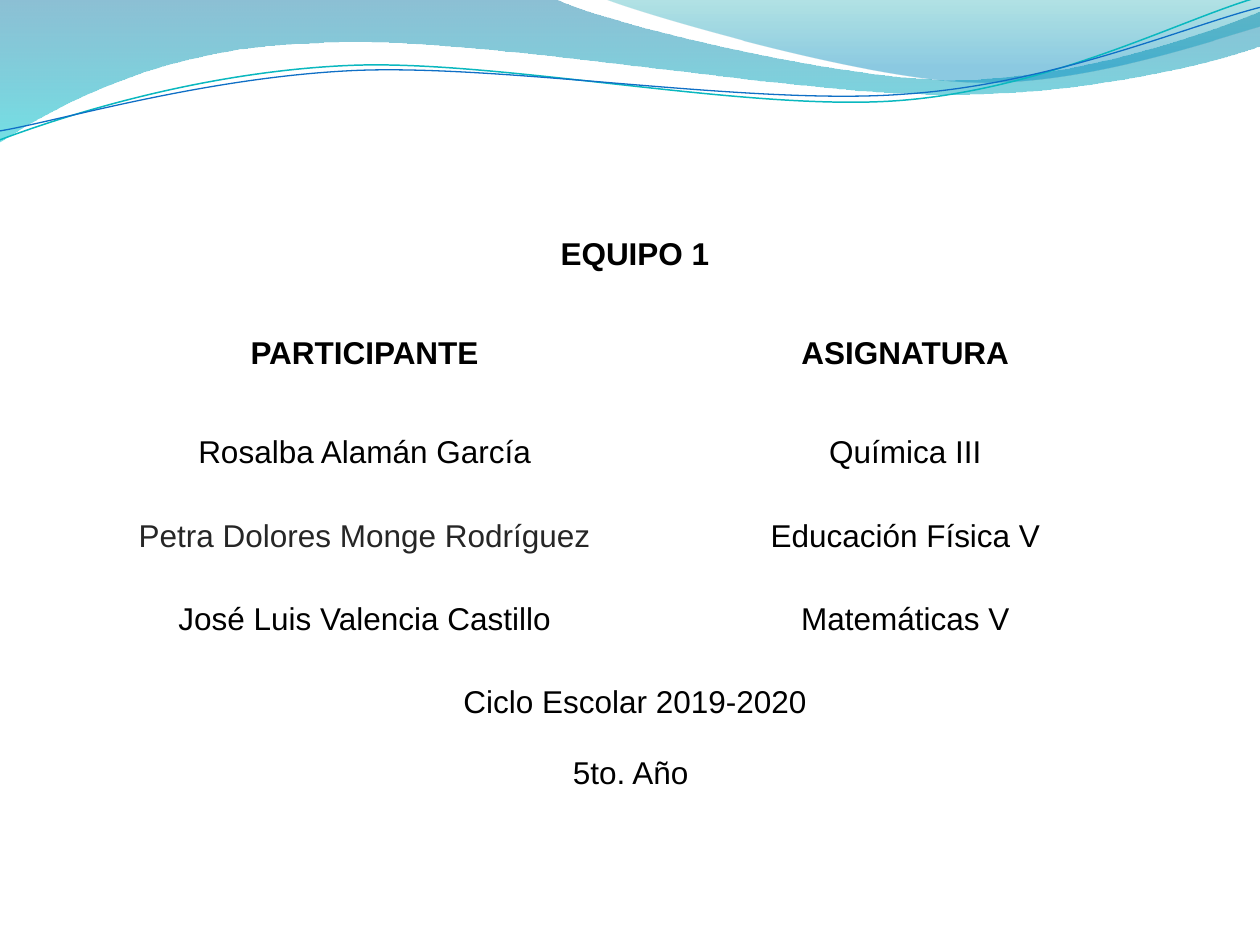
from lxml import etree
from pptx import Presentation, util as u
from pptx.dml.color import RGBColor
from pptx.enum import text
from pptx.oxml.ns import qn

COLORS = {"ink": "000000", "soft": "262626", "border": "FFFFFF",
          "sea": "0074A1", "aqua": "00C6CF", "green": "00A1A9", "sky": "008BBF",
          "teal": "0AB8BF", "blue": "0F6FC6"}

# Outlines in cm: a start point, then (x, y) lines or (x1, y1, x2, y2, x, y) curves
BANDS = [
    ([(0, 0), (11.18, -0.03), (12.09, 0.43, 16.87, 1.6, 19.25, 1.6),
      (21.67, 1.6, 24.33, 0.66, 25.4, 0.23), (25.43, 0.91),
      (24.97, 1.12, 22.1, 1.93, 18.95, 1.9), (15.8, 1.9, 9.7, 0.71, 6.53, 0.86),
      (3.28, 0.91, 1.17, 2.11, -0.03, 2.87)],
     [(0, "sea", 45), (100, "aqua", 55)]),
    ([(12.17, -0.03), (12.93, 0.28, 17.32, 1.57, 19.53, 1.65),
      (21.74, 1.75, 24.41, 0.81, 25.4, 0.53), (25.4, 0)],
     [(0, "green", 30), (80, "sky", 45)]),
]
LINES = [
    ([(0, 2.82), (1.22, 2.36, 4.01, 1.45, 7.04, 1.32),
      (10.03, 1.19, 15.06, 2.26, 18.11, 2.03),
      (21.16, 1.8, 23.83, 0.38, 25.35, -0.05)], "teal", 0.85),
    ([(0, 2.64), (1.19, 2.44, 4.17, 1.55, 7.19, 1.42),
      (10.24, 1.3, 15.16, 2.13, 18.21, 1.9),
      (21.23, 1.7, 23.9, 0.53, 25.4, 0.15)], "blue", 0.75),
]

TEAM = "EQUIPO 1"
HEADINGS = ("PARTICIPANTE", "ASIGNATURA")
MEMBERS = [
    ("Rosalba Alamán García", "Química III"),
    ("Petra Dolores Monge Rodríguez", "Educación Física V"),
    ("José Luis Valencia Castillo", "Matemáticas V"),
]
SOFT_NAME = MEMBERS[1][0]
CLOSING = ("Ciclo Escolar 2019-2020", "5to. Año ")
ROW_HEIGHTS = [1.65, 2.33] + [1.04] * (len(MEMBERS) + 1)
COLUMN, TABLE_HEIGHT = 10.9, 12.75


def rgb(name):
    return RGBColor.from_string(COLORS[name])


def add_wave(shapes, outline, close):
    """Build the outline through its end points, then bend the curved segments."""
    points = [(u.Cm(seg[-2]), u.Cm(seg[-1])) for seg in outline]
    fb = shapes.build_freeform(*points[0])
    fb.add_line_segments(points[1:], close=close)
    sp = fb.convert_to_shape()
    left, top = min(x for x, _ in points), min(y for _, y in points)
    for seg, ln_to in zip(outline[1:], list(sp._element.iter(qn("a:lnTo")))):
        if len(seg) == 6:
            curve = etree.Element(qn("a:cubicBezTo"))
            for x, y in zip(seg[::2], seg[1::2]):
                etree.SubElement(curve, qn("a:pt"), x=str(u.Cm(x) - left),
                                 y=str(u.Cm(y) - top))
            ln_to.getparent().replace(ln_to, curve)
    sp.shadow.inherit = False
    sp.fill.background()
    sp.line.fill.background()
    return sp


def set_gradient(sp, stops):
    """Top-down gradient; each stop is (position %, colour, opacity %)."""
    grad = etree.Element(qn("a:gradFill"), rotWithShape="1")
    gs_list = etree.SubElement(grad, qn("a:gsLst"))
    for pos, color, alpha in stops:
        gs = etree.SubElement(gs_list, qn("a:gs"), pos=str(pos * 1000))
        clr = etree.SubElement(gs, qn("a:srgbClr"), val=COLORS[color])
        etree.SubElement(clr, qn("a:alpha"), val=str(alpha * 1000))
    etree.SubElement(grad, qn("a:lin"), ang="5400000", scaled="1")
    spPr = sp._element.spPr
    spPr.replace(spPr.find(qn("a:noFill")), grad)


def set_borders(cell, bottom):
    tcPr = cell._tc.get_or_add_tcPr()
    for i, (side, pt) in enumerate((("L", 1), ("R", 1), ("T", 1), ("B", bottom))):
        ln = etree.Element(qn("a:ln" + side), w=str(u.Pt(pt)))
        fill = etree.SubElement(ln, qn("a:solidFill"))
        etree.SubElement(fill, qn("a:srgbClr"), val=COLORS["border"])
        tcPr.insert(i, ln)


def write_cell(cell, lines, bold=False, gap=0):
    cell.vertical_anchor = text.MSO_ANCHOR.MIDDLE
    tf = cell.text_frame
    for i, line in enumerate(lines):
        p = tf.add_paragraph() if i else tf.paragraphs[0]
        p.alignment = text.PP_ALIGN.CENTER
        p.line_spacing = 2.0
        p.space_before = p.space_after = u.Pt(gap)
        r = p.add_run()
        r.text = line
        r.font.name, r.font.size, r.font.bold = "Arial", u.Pt(18), bold
        r.font.color.rgb = rgb("soft" if line == SOFT_NAME else "ink")


def add_team_table(s):
    frame = s.shapes.add_table(len(ROW_HEIGHTS), 2, u.Cm(1.9), u.Cm(3.93),
                               u.Cm(2 * COLUMN), u.Cm(TABLE_HEIGHT))
    tbl = frame.table
    tbl.first_row = tbl.horz_banding = False
    for col in tbl.columns:
        col.width = u.Cm(COLUMN)
    for i, (row, height) in enumerate(zip(tbl.rows, ROW_HEIGHTS)):
        row.height = u.Cm(height)
        for cell in row.cells:
            cell.fill.background()
            set_borders(cell, 1 if i else 3)
    frame.height = u.Cm(TABLE_HEIGHT)
    last = len(ROW_HEIGHTS) - 1
    for i in (0, last):
        tbl.cell(i, 0).merge(tbl.cell(i, 1))
    write_cell(tbl.cell(0, 0), [TEAM], bold=True)
    for i, pair in enumerate([HEADINGS] + MEMBERS, start=1):
        for j, value in enumerate(pair):
            gap = 0 if value == HEADINGS[0] else 12
            write_cell(tbl.cell(i, j), [value], bold=i == 1, gap=gap)
    write_cell(tbl.cell(last, 0), CLOSING)


def main():
    prs = Presentation()
    prs.slide_width, prs.slide_height = u.Cm(25.4), u.Cm(19.05)
    s = prs.slides.add_slide(prs.slide_layouts[6])
    for outline, stops in BANDS:
        set_gradient(add_wave(s.shapes, outline, close=True), stops)
    grp = s.shapes.add_group_shape()
    for outline, color, width in LINES:
        sp = add_wave(grp.shapes, outline, close=False)
        sp.line.color.rgb = rgb(color)
        sp.line.width = u.Pt(width)
    add_team_table(s)
    prs.save("out.pptx")


if __name__ == "__main__":
    main()
